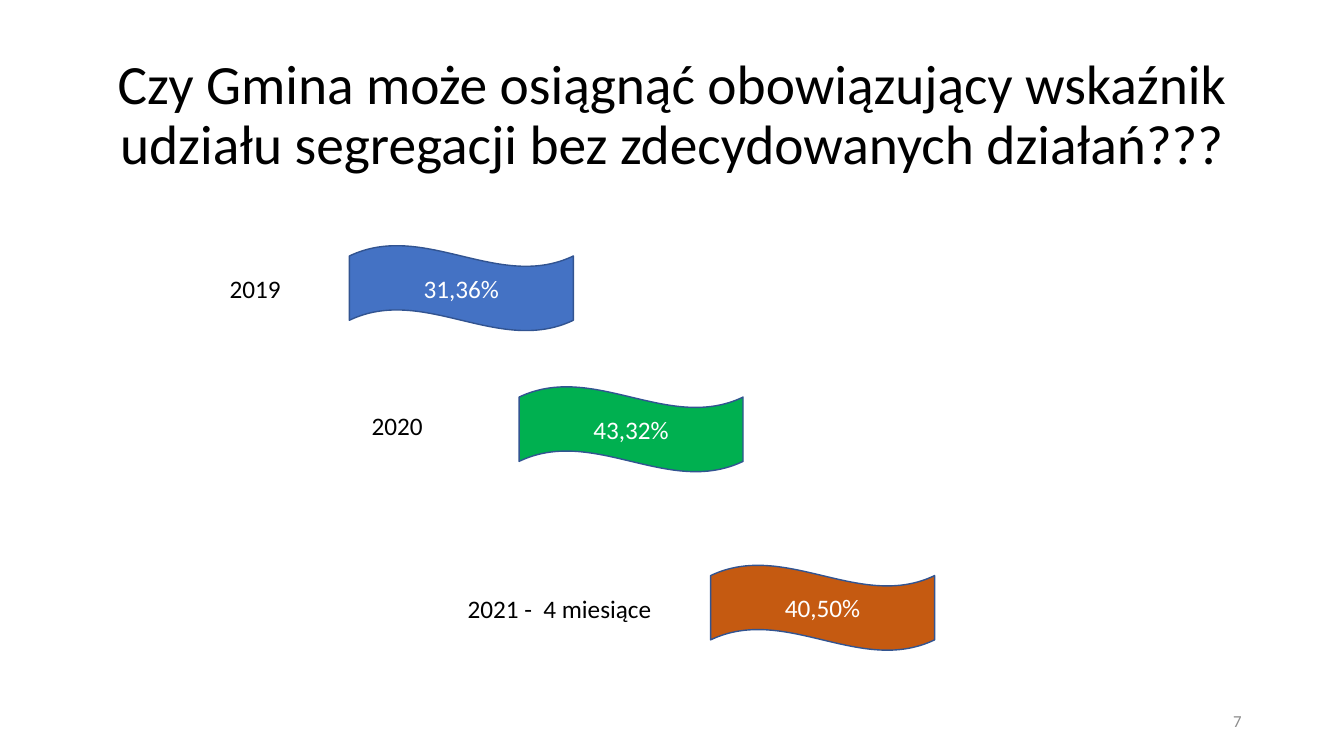
from dataclasses import dataclass

from pptx import Presentation
from pptx.dml.color import RGBColor
from pptx.enum.shapes import MSO_SHAPE as Shape
from pptx.enum.text import MSO_ANCHOR as Anchor, MSO_AUTO_SIZE as AutoSize, PP_ALIGN as Align
from pptx.util import Pt


@dataclass(frozen=True)
class Theme:
    """Hold the font, type sizes and colours of the slide."""

    font: str = "Calibri"
    title_size: float = 39.6
    body_size: float = 18
    number_size: float = 12
    text: str = "000000"
    wave_text: str = "FFFFFF"
    number: str = "8C8C8C"
    outline: str = "325491"
    blue: str = "4472C4"
    green: str = "00B050"
    orange: str = "C55A11"


THEME = Theme()
WAVE_WIDTH, WAVE_HEIGHT = 160, 61.2
LABEL_HEIGHT = 29
RESULTS = [
    ("2019", (157, 191.5, 57), "31,36%", (249.6, 175.2), THEME.blue),
    ("2020", (258.3, 289.5, 57), "43,32%", (370.8, 276), THEME.green),
    ("2021 -  4 miesiące", (327, 420, 165.6), "40,50%", (507.6, 403.5), THEME.orange),
]


def write_text(shape, text, size, color, align=Align.LEFT, anchor=Anchor.TOP):
    """Put one formatted paragraph into a shape and return it."""
    frame = shape.text_frame
    frame.text = text
    frame.word_wrap = True
    frame.auto_size = AutoSize.NONE
    frame.vertical_anchor = anchor
    paragraph = frame.paragraphs[0]
    paragraph.alignment = align
    font = paragraph.runs[0].font
    font.name = THEME.font
    font.size = Pt(size)
    font.color.rgb = RGBColor.from_string(color)
    return paragraph


def set_title(slide, text):
    """Place and format the title placeholder."""
    title = slide.shapes.title
    title.left, title.top, title.width, title.height = Pt(66), Pt(31), Pt(828), Pt(104.4)
    paragraph = write_text(title, text, THEME.title_size, THEME.text, Align.CENTER, Anchor.MIDDLE)
    paragraph.line_spacing = 0.9


def add_label(slide, text, left, top, width):
    """Add the period label beside a wave."""
    label = slide.shapes.add_textbox(Pt(left), Pt(top), Pt(width), Pt(LABEL_HEIGHT))
    write_text(label, text, THEME.body_size, THEME.text)


def add_wave(slide, text, left, top, color):
    """Add a coloured wave that carries a percentage."""
    wave = slide.shapes.add_shape(Shape.WAVE, Pt(left), Pt(top), Pt(WAVE_WIDTH), Pt(WAVE_HEIGHT))
    wave.shadow.inherit = False
    wave.fill.solid()
    wave.fill.fore_color.rgb = RGBColor.from_string(color)
    wave.line.color.rgb = RGBColor.from_string(THEME.outline)
    wave.line.width = Pt(1)
    write_text(wave, text, THEME.body_size, THEME.wave_text, Align.CENTER, Anchor.MIDDLE)


def add_page_number(slide, number):
    """Add the page number at the lower right."""
    box = slide.shapes.add_textbox(Pt(678), Pt(500.5), Pt(216), Pt(28.8))
    write_text(box, number, THEME.number_size, THEME.number, Align.RIGHT, Anchor.MIDDLE)


def main():
    """Build the slide and save it."""
    presentation = Presentation()
    presentation.slide_width, presentation.slide_height = Pt(960), Pt(540)
    slide = presentation.slides.add_slide(presentation.slide_layouts.get_by_name("Title Only"))
    set_title(
        slide,
        "Czy Gmina może osiągnąć obowiązujący wskaźnik "
        "udziału segregacji bez zdecydowanych działań???",
    )
    for period, label_box, share, wave_corner, color in RESULTS:
        add_label(slide, period, *label_box)
        add_wave(slide, share, *wave_corner, color)
    add_page_number(slide, "7")
    presentation.save("out.pptx")


if __name__ == "__main__":
    main()
